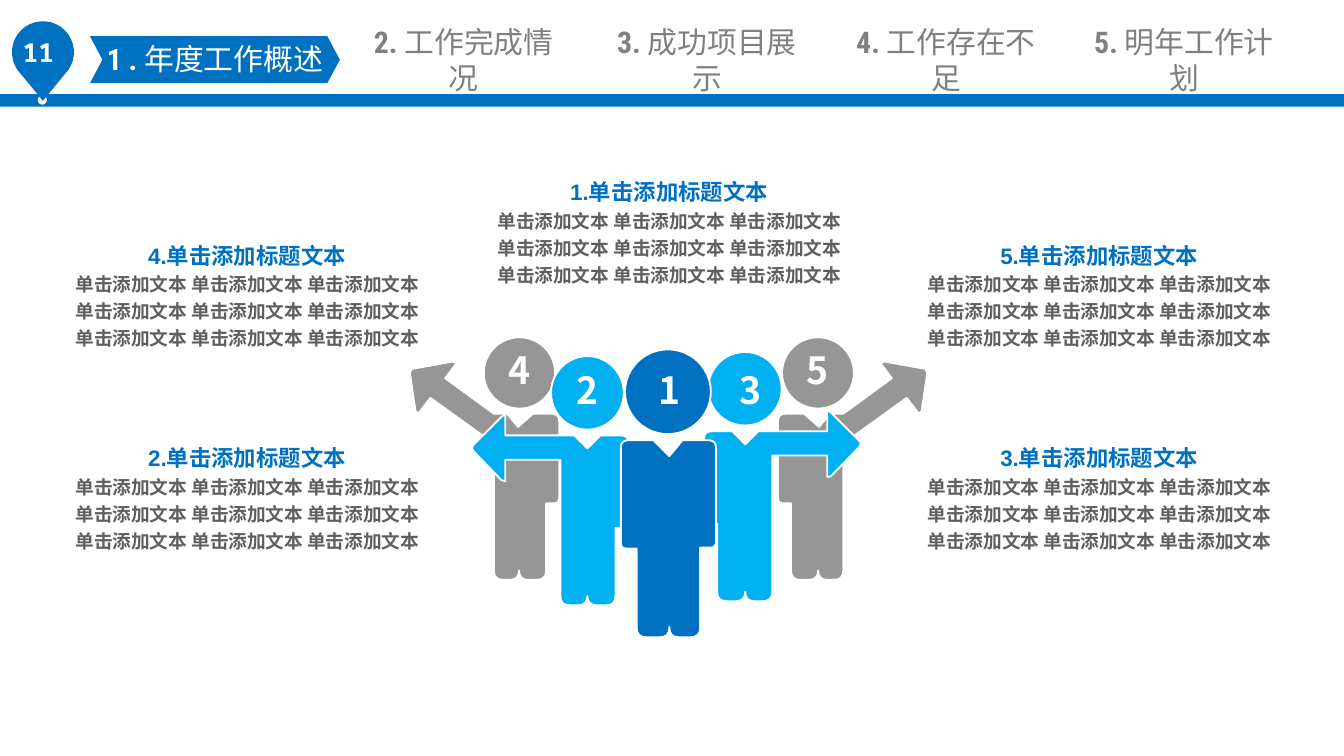
import math

import pptx
import pptx.dml.color
import pptx.enum.shapes
import pptx.enum.text
import pptx.util

Pt = pptx.util.Pt
Kind = pptx.enum.shapes.MSO_SHAPE
Anchor = pptx.enum.text.MSO_ANCHOR
Align = pptx.enum.text.PP_ALIGN
Fit = pptx.enum.text.MSO_AUTO_SIZE

BLUE, SKY, GREY, WHITE = "0070C0", "00B0F0", "969696", "FFFFFF"


def tint(code):
    return pptx.dml.color.RGBColor.from_string(code)


def write(para, text, size=10, font="Arial", color=WHITE, bold=True,
          align=Align.CENTER, space=None):
    """Add one run to a paragraph and format both."""
    run = para.add_run()
    run.text = text
    run.font.size, run.font.name, run.font.bold = Pt(size), font, bold
    run.font.color.rgb = tint(color)
    para.alignment = align
    if space:
        para.line_spacing = space


def curve(points):
    """Round each corner given as (x, y, radius); keep (x, y) sharp."""
    out = []
    for i, (x, y, *rad) in enumerate(points):
        if not rad:
            out.append((x, y))
            continue
        ends = []
        for near in (points[i - 1], points[(i + 1) % len(points)]):
            dx, dy = near[0] - x, near[1] - y
            part = min(1, rad[0] / math.hypot(dx, dy))
            ends.append((x + dx * part, y + dy * part))
        (ax, ay), (bx, by) = ends
        for t in (0, 0.25, 0.5, 0.75, 1):
            a, c, b = (1 - t) ** 2, 2 * t * (1 - t), t * t
            out.append((a * ax + c * x + b * bx, a * ay + c * y + b * by))
    return out


class Deck:
    def __init__(self, width, height):
        self.file = pptx.Presentation()
        self.file.slide_width, self.file.slide_height = Pt(width), Pt(height)
        self.slide = self.file.slides.add_slide(self.file.slide_layouts[5])
        self.font = "Roboto Condensed"

    def paint(self, shape, fill, line=None):
        shape.shadow.inherit = False
        shape.fill.solid()
        shape.fill.fore_color.rgb = tint(fill)
        if line:
            shape.line.color.rgb = tint(line)
            shape.line.width = Pt(1)
        else:
            shape.line.fill.background()
        return shape

    def shape(self, kind, box, fill, line=None, home=None):
        home = home or self.slide
        return self.paint(home.shapes.add_shape(kind, *map(Pt, box)), fill, line)

    def outline(self, points, fill, line=None, home=None):
        home = home or self.slide
        dots = [(Pt(x), Pt(y)) for x, y in points]
        pen = home.shapes.build_freeform(*dots[0], scale=1.0)
        pen.add_line_segments(dots[1:], close=True)
        return self.paint(pen.convert_to_shape(), fill, line)

    def person(self, head, body, x, y, fill, turn=1):
        """Group a head and a body; turn=-1 mirrors the body about x."""
        group = self.slide.shapes.add_group_shape()
        self.shape(Kind.OVAL, head, fill, WHITE, group)
        spots = [(x + turn * px, y + py) for px, py in curve(body)]
        self.outline(spots, fill, WHITE, group)

    def frame(self, box, wrap=True, anchor=Anchor.TOP, pad=(0, 0), shape=None):
        shape = shape or self.slide.shapes.add_textbox(0, 0, 0, 0)
        shape.left, shape.top, shape.width, shape.height = map(Pt, box)
        text = shape.text_frame
        text.word_wrap, text.vertical_anchor = wrap, anchor
        text.margin_left = text.margin_right = Pt(pad[0])
        text.margin_top = text.margin_bottom = Pt(pad[1])
        text.auto_size = Fit.SHAPE_TO_FIT_TEXT
        return text

    def tab(self, box, mark, name, color, shape=None):
        para = self.frame(box, anchor=Anchor.MIDDLE, shape=shape).paragraphs[0]
        write(para, mark, size=16, font=self.font, color=color)
        write(para, name, size=16, font=self.font, color=color, bold=False)

    def note(self, x, y, mark):
        text = self.frame((x, y, 200, 67.7), wrap=False, pad=(7.2, 3.6))
        write(text.paragraphs[0], f"{mark}.单击添加标题文本", size=12,
              color=BLUE, space=1.2)
        for _ in range(3):
            write(text.add_paragraph(), " ".join(["单击添加文本"] * 3),
                  color="5F5F5F", space=1.2)


deck = Deck(720, 405)

# Header bar and page pin
deck.shape(Kind.RECTANGLE, (0, 50.4, 720, 6.8), BLUE)
deck.shape(Kind.OVAL, (20.2, 51.1, 5, 5), "F6F6F6")
arc = [math.radians(a) for a in range(135, 406, 10)]
deck.outline([(23 + 16.6 * math.cos(a), 28 + 16.6 * math.sin(a)) for a in arc]
             + [(23, 54)], BLUE)
page = deck.frame((-2.9, 16.6, 46.8, 21.6), pad=(5, 2.9))
write(page.paragraphs[0], "11", size=14, font="Noto Sans Mono")

# Section tabs, the current one as title
flag = deck.shape(Kind.CHEVRON, (48.2, 19.4, 133.9, 25.2), BLUE)
flag.adjustments[0] = 0.267
title = deck.slide.shapes.title
deck.slide.shapes._spTree.append(title._element)  # bring in front of the flag
deck.tab((48.2, 19.4, 133.9, 23.8), "1 . ", "年度工作概述", WHITE, title)
names = ["工作完成情况", "成功项目展示", "工作存在不足", "明年工作计划"]
for i, (x, name) in enumerate(zip((193, 323.3, 451.4, 578.9), names), 2):
    deck.tab((x, 22.3, 110.9, 19.4), f"{i}. ", name, "808080")

# People: back pair with raised arms, middle pair with level arms, leader
back = [(0, 6), (1, 4), (23, 0), (25, 1), (19, 9), (45, 28), (52, 28),
        (58, 35), (66, 28), (80, 28, 4), (80, 76, 3), (73, 76), (73, 117, 5),
        (58.5, 117, 5), (58.5, 112), (58.5, 117, 5), (45, 117, 5), (45, 44),
        (11, 19.5), (4.5, 28), (3, 26.5)]
level = [(0, 18), (1, 16.5), (16, 1.5), (18, 0), (18, 11.5), (55, 11.5),
         (62, 18.5), (69, 11.5), (84, 11.5, 4), (84, 61, 3), (77, 61),
         (77, 102.5, 5), (62, 102.5, 5), (62, 97.5), (62, 102.5, 5),
         (47.5, 102.5, 5), (47.5, 24.5), (18, 24.5), (18, 36), (16, 35.5),
         (1, 20)]
lead = [(17.5, 0), (26, 8.5), (33, 0), (51, 0, 4), (51, 57.5, 3),
        (42.5, 57.5), (42.5, 105.5, 5), (26, 105.5, 5), (26, 100),
        (26, 105.5, 5), (8.5, 105.5, 5), (8.5, 58), (0, 58, 3), (0, 0, 4)]
deck.person((419, 180.7, 38.5, 38.2), back, 496.8, 193.7, GREY, -1)
deck.person((259.2, 180.7, 38.2, 38.2), back, 219.6, 193.7, GREY)
deck.person((295.2, 190.8, 39, 39.4), level, 252.7, 221.8, SKY)
deck.person((379.4, 188.6, 39.4, 39.4), level, 461.2, 219.6, SKY, -1)
deck.person((334.8, 187.2, 46, 45.4), lead, 332.6, 235.9, BLUE)

# Numbers on the heads
for mark, x, y in (("1", 352.8, 196.6), ("2", 308.9, 196.6), ("4", 272.2, 185.8),
                   ("5", 432, 185.8), ("3", 396, 196.6)):
    text = deck.frame((x, y, 11.5, 23.8), wrap=False)
    write(text.paragraphs[0], mark, size=20, font="Noto Sans CJK SC",
          align=Align.LEFT)

# Notes around the group
for mark, x, y in ((5, 488.9, 123.1), (3, 488.9, 231.8), (4, 32.4, 123.1),
                   (2, 32.4, 231.8), (1, 258.5, 89.3)):
    deck.note(x, y, mark)

deck.file.save("out.pptx")
